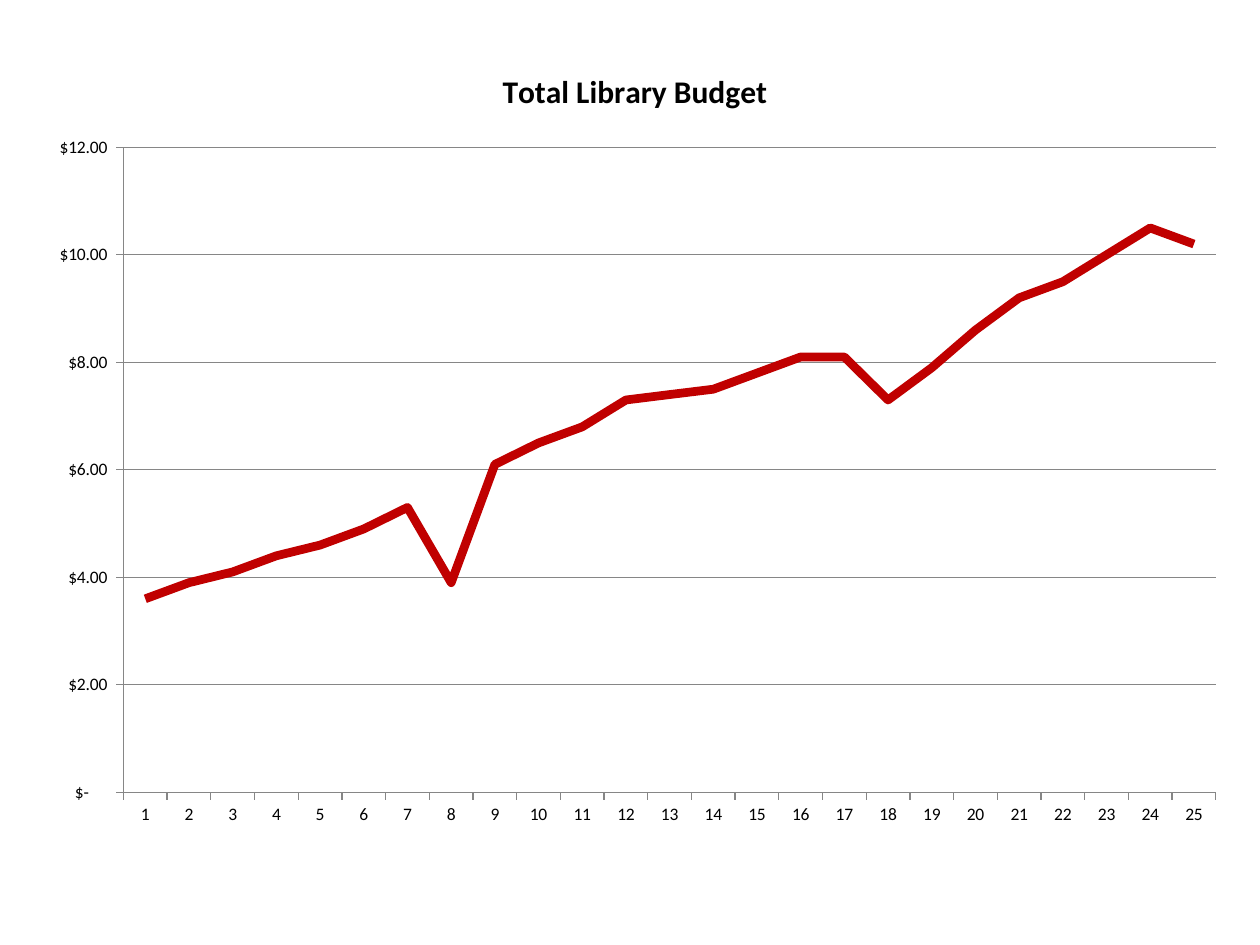
"""Build a slide with a line chart of the total library budget."""
from dataclasses import dataclass

from lxml import etree
from pptx import Presentation
from pptx import util as u
from pptx.chart import data as chart_data
from pptx.dml.color import RGBColor
from pptx.enum import chart as ch
from pptx.oxml import ns

BLACK = RGBColor(0x00, 0x00, 0x00)
GRAY = RGBColor(0x86, 0x86, 0x86)
RED = RGBColor(0xC0, 0x00, 0x00)
FONT = "Calibri"
TITLE = "Total Library Budget"
MONEY = r'_("$"* #,##0.00_);_("$"* \(#,##0.00\);_("$"* "-"??_);_(@_)'
BUDGETS = (
    3.6, 3.9, 4.1, 4.4, 4.6, 4.9, 5.3, 3.9, 6.1, 6.5, 6.8, 7.3, 7.4,
    7.5, 7.8, 8.1, 8.1, 7.3, 7.9, 8.6, 9.2, 9.5, 10, 10.5, 10.2,
)


@dataclass(frozen=True)
class Box:
    x: float
    y: float
    w: float
    h: float


CHART_BOX = Box(0.25, 0.33, 9.58, 6.33)
PLOT_BOX = Box(0.98, 1.17, 8.67, 5.12)


def set_values(target, values: dict) -> None:
    for name, value in values.items():
        setattr(target, name, value)


def style_font(font, size: int, bold: bool) -> None:
    set_values(font, {"name": FONT, "size": u.Pt(size), "bold": bold})
    font.color.rgb = BLACK


def style_line(line, color: RGBColor, width: float) -> None:
    line.color.rgb = color
    line.width = u.Pt(width)


def place_plot(chart, frame: Box, plot: Box) -> None:
    area = chart.plots[0]._element.getparent()
    for old_layout in area.findall(ns.qn("c:layout")):
        area.remove(old_layout)
    layout = etree.Element(ns.qn("c:layout"))
    manual = etree.SubElement(layout, ns.qn("c:manualLayout"))
    settings = {
        "layoutTarget": "inner",
        "xMode": "edge",
        "yMode": "edge",
        "x": (plot.x - frame.x) / frame.w,
        "y": (plot.y - frame.y) / frame.h,
        "w": plot.w / frame.w,
        "h": plot.h / frame.h,
    }
    for tag, value in settings.items():
        etree.SubElement(manual, ns.qn(f"c:{tag}")).set("val", str(value))
    area.insert(0, layout)


def add_budget_chart(slide) -> None:
    budget_data = chart_data.CategoryChartData(number_format=MONEY)
    budget_data.categories = [str(year) for year in range(1, len(BUDGETS) + 1)]
    budget_data.add_series(TITLE, BUDGETS)
    position = [u.Inches(n) for n in (CHART_BOX.x, CHART_BOX.y, CHART_BOX.w, CHART_BOX.h)]
    chart = slide.shapes.add_chart(ch.XL_CHART_TYPE.LINE, *position, budget_data).chart

    style_font(chart.font, 10, False)
    set_values(chart, {"has_legend": False, "has_title": True})
    heading = chart.chart_title.text_frame
    heading.text = TITLE
    style_font(heading.paragraphs[0].runs[0].font, 18, True)
    chart.chart_title.include_in_layout = False

    years, dollars = chart.category_axis, chart.value_axis
    for axis in (years, dollars):
        set_values(axis, {
            "major_tick_mark": ch.XL_TICK_MARK.OUTSIDE,
            "minor_tick_mark": ch.XL_TICK_MARK.NONE,
        })
        style_line(axis.format.line, GRAY, 0.75)
    years.has_major_gridlines = False
    set_values(dollars, {
        "minimum_scale": 0,
        "maximum_scale": 12,
        "major_unit": 2,
        "has_major_gridlines": True,
    })
    style_line(dollars.major_gridlines.format.line, GRAY, 0.75)
    set_values(dollars.tick_labels, {"number_format": MONEY, "number_format_is_linked": False})

    plot = chart.plots[0]
    plot.vary_by_categories = False
    budget = plot.series[0]
    budget.smooth = False
    budget.marker.style = ch.XL_MARKER_STYLE.NONE
    style_line(budget.format.line, RED, 5)
    place_plot(chart, CHART_BOX, PLOT_BOX)


def main() -> None:
    deck = Presentation()
    set_values(deck, {"slide_width": u.Inches(10), "slide_height": u.Inches(7.5)})
    add_budget_chart(deck.slides.add_slide(deck.slide_layouts[6]))
    deck.save("out.pptx")


if __name__ == "__main__":
    main()
